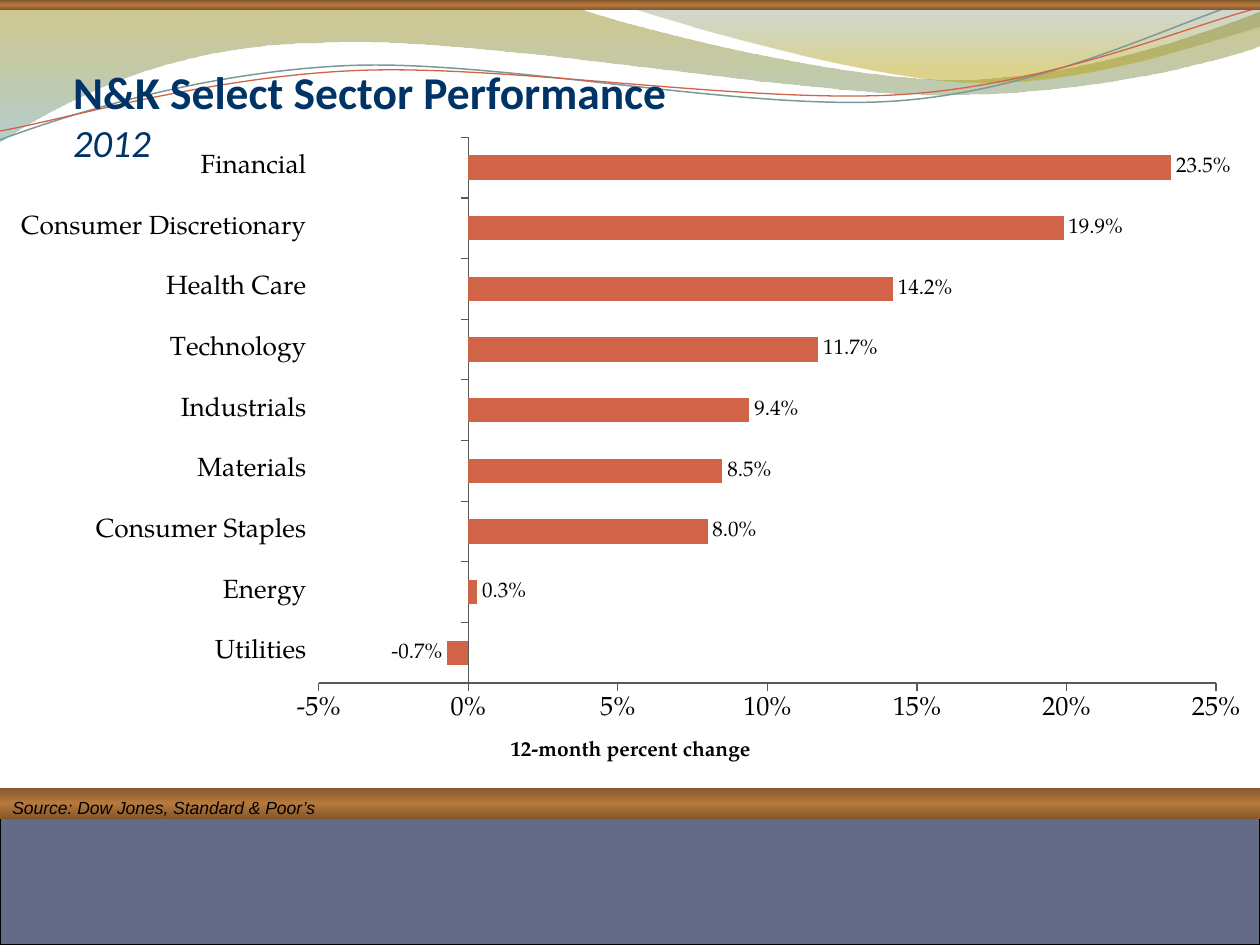
from math import cos, radians, sin

from lxml import etree
from pptx import Presentation
from pptx.chart.data import CategoryChartData
from pptx.dml.color import RGBColor
from pptx.enum.chart import XL_CHART_TYPE, XL_LABEL_POSITION, XL_TICK_LABEL_POSITION, XL_TICK_MARK
from pptx.enum.shapes import MSO_SHAPE
from pptx.enum.text import MSO_ANCHOR, MSO_AUTO_SIZE, PP_ALIGN
from pptx.oxml.ns import qn
from pptx.util import Inches, Pt

BAR = XL_CHART_TYPE.BAR_CLUSTERED
OUT_END = XL_LABEL_POSITION.OUTSIDE_END
LOW = XL_TICK_LABEL_POSITION.LOW
TICK_OUT, NO_TICK = XL_TICK_MARK.OUTSIDE, XL_TICK_MARK.NONE
RECT = MSO_SHAPE.RECTANGLE

NAVY = RGBColor(0x00, 0x33, 0x66)
BLACK = RGBColor(0x00, 0x00, 0x00)
SLATE = RGBColor(0x64, 0x6B, 0x86)
RUST = RGBColor(0xD1, 0x63, 0x49)
TEAL = RGBColor(0x7C, 0x99, 0x9A)
GREY = RGBColor(0x59, 0x59, 0x59)
BROWN = RGBColor(0x83, 0x57, 0x2C)
COPPER = RGBColor(0xB7, 0x7A, 0x3D)
OLIVE = RGBColor(0x97, 0x85, 0x00)
AQUA = RGBColor(0x77, 0xA5, 0xA6)
MOSS = RGBColor(0x64, 0x84, 0x84)
GOLD = RGBColor(0xB4, 0x9F, 0x00)
SERIF = "TeX Gyre Pagella"
TILT = 2.7

prs = Presentation()
prs.slide_width, prs.slide_height = Inches(10), Inches(7.5)
W, H = prs.slide_width, prs.slide_height
slide = prs.slides.add_slide(prs.slide_layouts[5])
shapes = slide.shapes


def shade(shape, stops):
    """Fill from top to bottom with (percent, colour, opacity) stops."""
    shape.fill.gradient()
    shape.fill.gradient_angle = 270
    items = shape._element.spPr.find(qn("a:gradFill")).find(qn("a:gsLst"))
    for old in list(items):
        items.remove(old)
    for pos, color, alpha in stops:
        stop = etree.SubElement(items, qn("a:gs"), pos=str(pos * 1000))
        tint = etree.SubElement(stop, qn("a:srgbClr"), val=str(color))
        if alpha < 100:
            etree.SubElement(tint, qn("a:alpha"), val=str(alpha * 1000))


def trace(start, parts, closed):
    """Draw an outline; a part is one point, or three for a Bezier curve."""
    pen = shapes.build_freeform(Inches(start[0]), Inches(start[1]))
    spots = [(Inches(x), Inches(y)) for part in parts for x, y in part]
    pen.add_line_segments(spots, close=closed)
    shape = pen.convert_to_shape()
    shape.shadow.inherit = False
    lines = iter(list(shape._element.iter(qn("a:lnTo"))))
    for part in parts:
        first = next(lines)
        if len(part) == 3:
            first.tag = qn("a:cubicBezTo")
            for more in (next(lines), next(lines)):
                first.append(more[0])
                more.getparent().remove(more)
    return shape


# Waves
waves = [
    ((0, -0.01), [
        [(4.4, -0.01)],
        [(4.76, 0.17), (6.64, 0.63), (7.58, 0.63)],
        [(8.53, 0.63), (9.58, 0.26), (10, 0.09)],
        [(10.01, 0.36)],
        [(9.83, 0.44), (8.7, 0.76), (7.46, 0.75)],
        [(6.22, 0.75), (3.82, 0.28), (2.57, 0.34)],
        [(1.29, 0.35), (0.46, 0.83), (-0.01, 1.13)],
        [(0, -0.01)],
    ], [(0, OLIVE, 45), (100, AQUA, 55)]),
    ((4.79, -0.01), [
        [(5.09, 0.11), (6.82, 0.62), (7.69, 0.65)],
        [(8.56, 0.69), (9.61, 0.32), (10, 0.21)],
        [(10, 0)],
        [(4.79, -0.01)],
    ], [(0, MOSS, 30), (80, GOLD, 45)]),
]
for start, parts, stops in waves:
    wave = trace(start, parts, True)
    shade(wave, stops)
    wave.line.fill.background()

# Threads, laid level about their centre and then tilted as shapes
threads = [
    ((0, 1.11), [
        [(0.48, 0.93), (1.58, 0.57), (2.77, 0.52)],
        [(3.95, 0.47), (5.93, 0.89), (7.13, 0.8)],
        [(8.33, 0.71), (9.38, 0.15), (9.98, -0.02)],
    ], (4.99, 0.58), TEAL, 0.85),
    ((0, 1.04), [
        [(0.47, 0.96), (1.64, 0.61), (2.83, 0.56)],
        [(4.03, 0.51), (5.97, 0.83), (7.17, 0.75)],
        [(8.36, 0.67), (9.41, 0.21), (10, 0.06)],
    ], (5, 0.59), RUST, 0.75),
]
c, s = cos(radians(TILT)), sin(radians(TILT))
for start, parts, (mx, my), color, width in threads:
    level = [[(mx + (x - mx) * c - (y - my) * s, my + (x - mx) * s + (y - my) * c)
              for x, y in part] for part in [[start]] + parts]
    thread = trace(level[0][0], level[1:], False)
    thread.rotation = 360 - TILT
    thread.fill.background()
    thread.line.color.rgb = color
    thread.line.width = Pt(width)

# Bands
top_band, base, low_band = [
    shapes.add_shape(RECT, 0, Inches(top), W, Inches(height))
    for top, height in ((0, 0.08), (6.42, 1.08), (6.25, 0.25))]
base.shadow.inherit = False
base.fill.solid()
base.fill.fore_color.rgb = SLATE
base.line.color.rgb = BLACK
base.line.width = Pt(0.75)
for band in (top_band, low_band):
    band.shadow.inherit = False
    band.line.fill.background()
    shade(band, [(0, BROWN, 100), (50, COPPER, 100), (100, BROWN, 100)])

# Title, brought in front of the waves
title = shapes.title
shapes._spTree.append(title._element)
title.left, title.top = Inches(0.58), Inches(0.31)
title.width, title.height = Inches(8.5), Inches(1)
frame = title.text_frame
frame.text = "N&K Select Sector Performance\v2012"
frame.auto_size = MSO_AUTO_SIZE.NONE
frame.vertical_anchor = MSO_ANCHOR.BOTTOM
frame.margin_left = frame.margin_right = frame.margin_bottom = 0
frame.margin_top = Inches(0.05)
para = frame.paragraphs[0]
para.alignment = PP_ALIGN.LEFT
for run, size, main in zip(para.runs, (26, 22), (True, False)):
    run.font.name = "Calibri"
    run.font.size = Pt(size)
    run.font.color.rgb = NAVY
    run.font.bold = main
    run.font.italic = not main

# Source
source = shapes.add_textbox(0, Inches(6.28), Inches(5.17), Inches(0.27))
source.text_frame.word_wrap = True
para = source.text_frame.paragraphs[0]
para.text = "Source: Dow Jones, Standard & Poor’s"
font = para.runs[0].font
font.name, font.size, font.italic = "Arial", Pt(10), True
font.color.rgb = BLACK

# Chart
sectors = {
    "Utilities": -0.007, "Energy": 0.003, "Consumer Staples": 0.08,
    "Materials": 0.085, "Industrials": 0.094, "Technology": 0.117,
    "Health Care": 0.142, "Consumer Discretionary": 0.199, "Financial": 0.235,
}
data = CategoryChartData(number_format="0.0%")
data.categories = list(sectors)
data.add_series("Series 1", list(sectors.values()))
chart = shapes.add_chart(BAR, 0, Inches(0.93), Inches(9.92), Inches(5.17), data).chart
chart.has_legend = chart.has_title = False
chart.font.name, chart.font.size = SERIF, Pt(18)
chart.font.color.rgb = BLACK

plot = chart.plots[0]
plot.gap_width = 150
plot.vary_by_categories = False
bars = plot.series[0]
bars.invert_if_negative = False
bars.format.fill.solid()
bars.format.fill.fore_color.rgb = RUST
tags = bars.data_labels
tags.show_value = True
tags.number_format, tags.number_format_is_linked = "0.0%", False
tags.position = OUT_END
tags.font.name, tags.font.size = SERIF, Pt(12)
tags.font.color.rgb = BLACK

cats, vals = chart.category_axis, chart.value_axis
for axis in (cats, vals):
    axis.has_major_gridlines = False
    axis.major_tick_mark, axis.minor_tick_mark = TICK_OUT, NO_TICK
    axis.tick_labels.font.size = Pt(15)
    axis.format.line.color.rgb = GREY
    axis.format.line.width = Pt(0.75)
cats.tick_label_position = LOW
vals.minimum_scale, vals.maximum_scale, vals.major_unit = -0.05, 0.25, 0.05
vals.tick_labels.number_format = "0%"
vals.tick_labels.number_format_is_linked = False
para = vals.axis_title.text_frame.paragraphs[0]
para.text = "12-month percent change"
font = para.runs[0].font
font.name, font.size, font.bold = SERIF, Pt(12), True
font.color.rgb = BLACK

area = chart._chartSpace.chart.plotArea
for old in area.findall(qn("c:layout")):
    area.remove(old)
layout = etree.Element(qn("c:layout"))
area.insert(0, layout)
manual = etree.SubElement(layout, qn("c:manualLayout"))
for key, val in (("layoutTarget", "inner"), ("xMode", "edge"), ("yMode", "edge"),
                 ("x", "0.255"), ("y", "0.031"), ("w", "0.718"), ("h", "0.838")):
    etree.SubElement(manual, qn("c:" + key), val=val)

prs.save("out.pptx")
